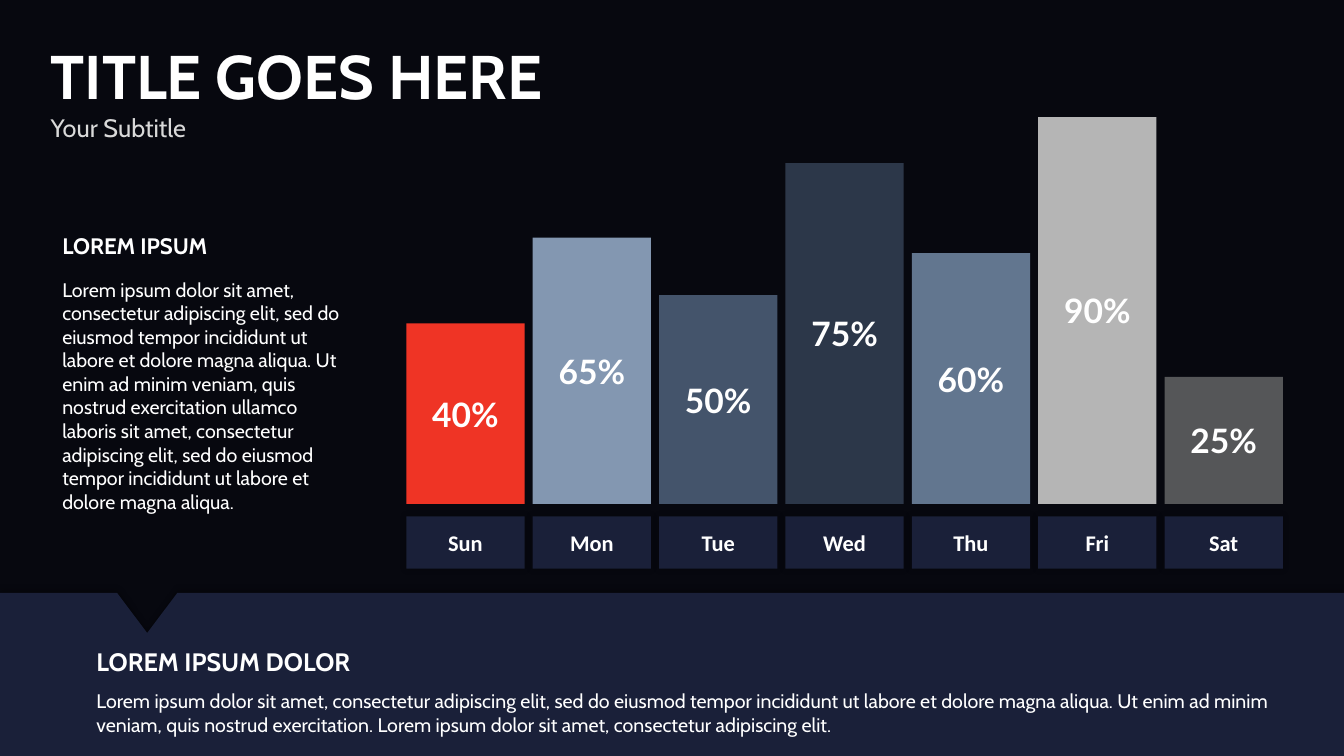
import pptx
import pptx.util
import pptx.dml.color
import pptx.enum.shapes
import pptx.enum.text
from lxml import etree
from pptx.oxml.ns import qn
from pptx.util import Cm, Pt

HUES = {
    "back": "07080F", "navy": "222A49", "white": "FFFFFF", "pale": "D9D9D9",
    "black": "000000", "red": "EF3425", "sky": "8397B1", "slate": "44546B",
    "ink": "2C3749", "steel": "62768F", "silver": "B5B5B5", "gray": "808080",
}

# Day, share, bar height in cm, colour, opacity in percent
DAYS = [
    ("Sun", "40%", 4.55, "red", 100),
    ("Mon", "65%", 6.71, "sky", 100),
    ("Tue", "50%", 5.26, "slate", 100),
    ("Wed", "75%", 8.59, "ink", 100),
    ("Thu", "60%", 6.32, "steel", 100),
    ("Fri", "90%", 9.75, "silver", 100),
    ("Sat", "25%", 3.2, "gray", 65),
]
WIDE, HIGH = 33.87, 19.05
LEFT, STEP, WIDTH, BASE = 10.24, 3.185, 2.98, 12.7

SIDE = ("Lorem ipsum dolor sit amet, consectetur adipiscing elit, sed do "
        "eiusmod tempor incididunt ut labore et dolore magna aliqua. Ut enim "
        "ad minim veniam, quis nostrud exercitation ullamco laboris sit amet, "
        "consectetur adipiscing elit, sed do eiusmod tempor incididunt ut "
        "labore et dolore magna aliqua.")
FOOT = ("Lorem ipsum dolor sit amet, consectetur adipiscing elit, sed do "
        "eiusmod tempor incididunt ut labore et dolore magna aliqua. Ut enim "
        "ad minim veniam, quis nostrud exercitation. Lorem ipsum dolor sit "
        "amet, consectetur adipiscing elit.")


def hue(name):
    return pptx.dml.color.RGBColor.from_string(HUES[name])


def fade(color, share):
    etree.SubElement(color, qn("a:alpha"), val=str(share * 1000))


def paint(shape, name, share=100):
    shape.shadow.inherit = False
    shape.line.fill.background()
    shape.fill.solid()
    shape.fill.fore_color.rgb = hue(name)
    if share < 100:
        fade(shape._element.spPr.find(qn("a:solidFill"))[0], share)


def shade(shape, blur, dist=0, angle=0):
    """Fill the empty effect list with a soft black shadow."""
    glow = etree.SubElement(
        shape._element.spPr.find(qn("a:effectLst")), qn("a:outerShdw"),
        blurRad=str(Pt(blur)), dist=str(Pt(dist)), dir=str(angle * 60000),
        algn="ctr", rotWithShape="0")
    fade(etree.SubElement(glow, qn("a:srgbClr"), val=HUES["black"]), 40)


def style(para, face, size, bold, name="white"):
    for run in para.runs:
        font = run.font
        font.name, font.size, font.bold = face, Pt(size), bold
        font.color.rgb = hue(name)


def block(slide, y, high, name, share, text, face, size, x):
    box = slide.shapes.add_shape(
        pptx.enum.shapes.MSO_SHAPE.RECTANGLE,
        Cm(x), Cm(y), Cm(WIDTH), Cm(high))
    paint(box, name, share)
    frame = box.text_frame
    frame.text = text
    frame.vertical_anchor = pptx.enum.text.MSO_ANCHOR.MIDDLE
    para = frame.paragraphs[0]
    para.alignment = pptx.enum.text.PP_ALIGN.CENTER
    style(para, face, size, True)
    return box


def pair(box, place, head, body, gap, sizes, tone="white"):
    """Write a bold heading and a plain paragraph into a box."""
    box.left, box.top, box.width, box.height = [Cm(n) for n in place]
    frame = box.text_frame
    frame.word_wrap = True
    frame.auto_size = pptx.enum.text.MSO_AUTO_SIZE.NONE
    frame.vertical_anchor = pptx.enum.text.MSO_ANCHOR.TOP
    frame.text = head + "\n" + body
    first, last = frame.paragraphs
    for para in (first, last):
        para.alignment = pptx.enum.text.PP_ALIGN.LEFT
        para.space_before = Pt(0)
    last.space_before = Pt(gap)
    style(first, "Cabin", sizes[0], True)
    style(last, "Cabin", sizes[1], False, tone)


def band(slide):
    top = 14.94
    spots = [(2.95, top), (3.71, 15.95), (4.47, top),
             (WIDE, top), (WIDE, HIGH), (0, HIGH)]
    pen = slide.shapes.build_freeform(Cm(0), Cm(top))
    pen.add_line_segments([(Cm(x), Cm(y)) for x, y in spots], close=True)
    shape = pen.convert_to_shape()
    paint(shape, "navy", 75)
    shade(shape, 4, 3, 270)


def main():
    deck = pptx.Presentation()
    deck.slide_width, deck.slide_height = Cm(WIDE), Cm(HIGH)
    slide = deck.slides.add_slide(deck.slide_layouts[5])
    slide.background.fill.solid()
    slide.background.fill.fore_color.rgb = hue("back")

    # Title and subtitle
    pair(slide.shapes.title, (1.02, 0.84, 16.5, 2.9),
         "TITLE GOES HERE", "Your Subtitle", 0, (44, 18), "pale")

    # Bars and day labels
    for i, (day, share, high, name, solid) in enumerate(DAYS):
        x = LEFT + i * STEP
        label = block(slide, 13.01, 1.32, "navy", 75, day, "Calibri", 16, x)
        shade(label, 5)
        block(slide, BASE - high, high, name, solid, share, "Lato", 24, x)

    # Side text
    side = slide.shapes.add_textbox(0, 0, 0, 0)
    pair(side, (1.32, 5.72, 7.62, 7.47), "LOREM IPSUM", SIDE, 13.5, (16, 14))

    # Bottom band and its text
    band(slide)
    foot = slide.shapes.add_textbox(0, 0, 0, 0)
    pair(foot, (2.18, 16.15, 30.66, 2.57), "LOREM IPSUM DOLOR", FOOT,
         9.5, (18, 14))

    deck.save("out.pptx")


if __name__ == "__main__":
    main()
